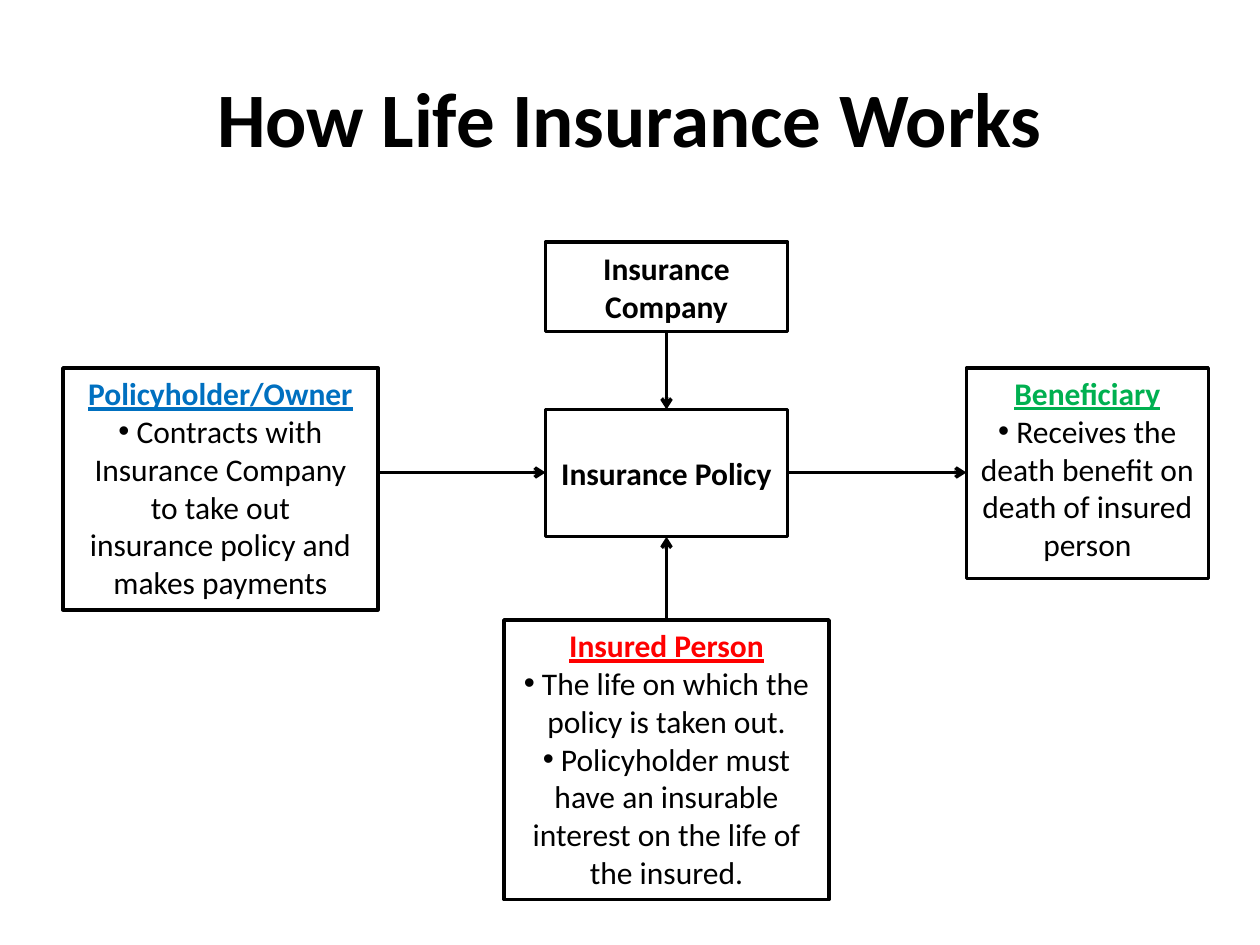
import lxml.etree
import pptx
import pptx.dml.color
import pptx.enum.shapes
import pptx.enum.text
import pptx.oxml.ns
import pptx.util

Inches = pptx.util.Inches
qn = pptx.oxml.ns.qn
BLACK = "000000"
WHITE = "FFFFFF"
CENTER_X = 5.29
ARROW_Y = 3.75

COMPANY_BOX = (4.33, 1.92, 1.92, 0.71)
POLICY_BOX = (4.33, 3.25, 1.92, 1.01)
OWNER_BOX = (0.5, 2.92, 2.5, 1.92)
BENEFICIARY_BOX = (7.67, 2.92, 1.92, 1.67)
INSURED_BOX = (4, 4.92, 2.58, 2.22)


def color(value):
    """Return the colour for a hex string."""
    return pptx.dml.color.RGBColor.from_string(value)


def add_run(paragraph, text, size=18, hex_color=BLACK, bold=False, underline=False):
    """Add one formatted run to a centred paragraph."""
    paragraph.alignment = pptx.enum.text.PP_ALIGN.CENTER
    run = paragraph.add_run()
    run.text = text
    run.font.name = "Calibri"
    run.font.size = pptx.util.Pt(size)
    run.font.bold = bold
    run.font.underline = underline
    run.font.color.rgb = color(hex_color)


def add_bullet(paragraph):
    """Give a paragraph a round bullet without indent."""
    properties = paragraph._p.get_or_add_pPr()
    properties.set("marL", "0")
    properties.set("indent", "0")
    lxml.etree.SubElement(properties, qn("a:buFont"), typeface="Arial")
    lxml.etree.SubElement(properties, qn("a:buChar"), char="•")


def add_title(slide, box, text):
    """Place the slide title in the given box."""
    title = slide.shapes.title
    title.left, title.top, title.width, title.height = map(Inches, box)
    title.text_frame.vertical_anchor = pptx.enum.text.MSO_ANCHOR.MIDDLE
    add_run(title.text_frame.paragraphs[0], text, size=44, bold=True)


def add_box(slide, box):
    """Add an outlined white rectangle and return its text frame."""
    shape = slide.shapes.add_shape(
        pptx.enum.shapes.MSO_SHAPE.RECTANGLE, *map(Inches, box))
    shape.shadow.inherit = False
    shape.fill.solid()
    shape.fill.fore_color.rgb = color(WHITE)
    shape.line.color.rgb = color(BLACK)
    shape.line.width = pptx.util.Pt(2)
    frame = shape.text_frame
    frame.word_wrap = True
    return frame


def add_label_box(slide, box, label):
    """Add a box with one bold label in its middle."""
    frame = add_box(slide, box)
    frame.vertical_anchor = pptx.enum.text.MSO_ANCHOR.MIDDLE
    add_run(frame.paragraphs[0], label, bold=True)


def add_role_box(slide, box, heading, hex_color, lines):
    """Add a box with a coloured heading above (text, bulleted) lines."""
    frame = add_box(slide, box)
    frame.vertical_anchor = pptx.enum.text.MSO_ANCHOR.TOP
    add_run(frame.paragraphs[0], heading, hex_color=hex_color, bold=True, underline=True)
    for text, bulleted in lines:
        paragraph = frame.add_paragraph()
        add_run(paragraph, text)
        if bulleted:
            add_bullet(paragraph)


def add_arrow(slide, start, end):
    """Draw a straight arrow from start to end."""
    connector = slide.shapes.add_connector(
        pptx.enum.shapes.MSO_CONNECTOR.STRAIGHT, *map(Inches, start + end))
    connector.line.color.rgb = color(BLACK)
    connector.line.width = pptx.util.Pt(2)
    lxml.etree.SubElement(connector.line._get_or_add_ln(), qn("a:tailEnd"), type="arrow")
    lxml.etree.SubElement(connector._element.spPr, qn("a:effectLst"))


def right(box):
    """Return the right edge of a box."""
    return box[0] + box[2]


def bottom(box):
    """Return the bottom edge of a box."""
    return box[1] + box[3]


def add_diagram(slide):
    """Place the policy, the parties around it and their arrows."""
    add_label_box(slide, COMPANY_BOX, "Insurance Company")
    add_label_box(slide, POLICY_BOX, "Insurance Policy")
    add_role_box(slide, OWNER_BOX, "Policyholder/Owner", "0070C0", [
        (" Contracts with Insurance Company", True),
        (" to take out ", False),
        ("insurance policy and makes payments", False),
    ])
    add_role_box(slide, BENEFICIARY_BOX, "Beneficiary", "00B050", [
        (" Receives the death benefit on death of insured person", True),
    ])
    add_role_box(slide, INSURED_BOX, "Insured Person", "FF0000", [
        (" The life on which the policy is taken out.", True),
        (" Policyholder must have an insurable interest on the life of the insured.", True),
    ])
    add_arrow(slide, (right(OWNER_BOX), ARROW_Y), (POLICY_BOX[0], ARROW_Y))
    add_arrow(slide, (right(POLICY_BOX), ARROW_Y), (BENEFICIARY_BOX[0], ARROW_Y))
    add_arrow(slide, (CENTER_X, bottom(COMPANY_BOX)), (CENTER_X, POLICY_BOX[1]))
    add_arrow(slide, (CENTER_X, INSURED_BOX[1]), (CENTER_X, bottom(POLICY_BOX)))


def main():
    """Build and save the presentation."""
    presentation = pptx.Presentation()
    presentation.slide_width = Inches(10)
    presentation.slide_height = Inches(7.5)
    slide = presentation.slides.add_slide(presentation.slide_layouts.get_by_name("Title Only"))
    add_title(slide, (0.5, 0.3, 9, 1.25), "How Life Insurance Works")
    add_diagram(slide)
    presentation.save("out.pptx")


if __name__ == "__main__":
    main()
